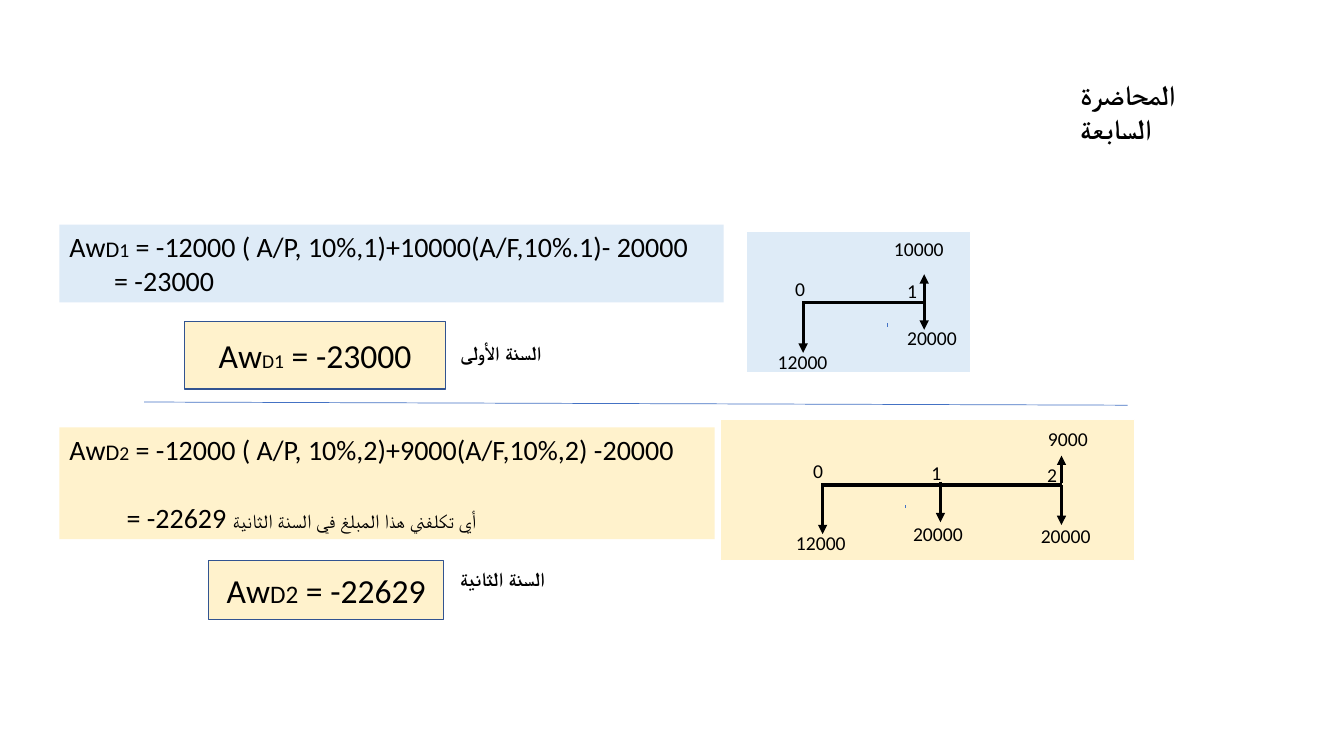
"""Build a slide comparing annual worth over one and two years with cash-flow diagrams."""
import dataclasses

import pptx
import pptx.dml.color
import pptx.enum.shapes
import pptx.enum.text
import pptx.oxml
import pptx.oxml.ns
import pptx.util


@dataclasses.dataclass(frozen=True)
class Theme:
    ink: str = "000000"
    paper: str = "FFFFFF"
    blue: str = "DEEBF7"
    cream: str = "FFF2CC"
    border: str = "325491"
    accent: str = "4472C4"
    title_font: str = "Arial"
    body_font: str = "Calibri"
    result_size: int = 24
    formula_size: int = 20
    result_mark: int = 18
    formula_mark: int = 16
    label_size: int = 14
    thick: float = 2.25
    outline: float = 1
    hairline: float = 0.5


class Sheet:
    def __init__(self, deck, theme):
        self.theme = theme
        self.slide = deck.slides.add_slide(deck.slide_layouts[5])
        self.shapes = self.slide.shapes

    def color(self, value):
        return pptx.dml.color.RGBColor.from_string(value)

    def add_spans(self, para, spans, font=None, size=None, bold=False):
        for text, span_size in spans:
            span = para.add_run()
            span.text = text
            if span_size:
                span.font.size = pptx.util.Pt(span_size)
        para.font.name = font or self.theme.body_font
        para.font.color.rgb = self.color(self.theme.ink)
        para.font.bold = bold
        if size:
            para.font.size = pptx.util.Pt(size)

    def title(self, text, *place):
        box = self.shapes.title
        box.left, box.top, box.width, box.height = map(pptx.util.Cm, place)
        frame = box.text_frame
        frame.word_wrap = True
        frame.auto_size = pptx.enum.text.MSO_AUTO_SIZE.NONE
        frame.vertical_anchor = pptx.enum.text.MSO_ANCHOR.TOP
        para = frame.paragraphs[0]
        para.alignment = pptx.enum.text.PP_ALIGN.LEFT
        self.add_spans(para, [(text, None)], self.theme.title_font, self.theme.formula_size, True)

    def label(self, text, left, top, width=2.34, height=0.86, bold=False):
        box = self.shapes.add_textbox(*map(pptx.util.Cm, (left, top, width, height)))
        box.text_frame.word_wrap = True
        self.add_spans(box.text_frame.paragraphs[0], [(text, None)], size=self.theme.label_size, bold=bold)

    def panel(self, place, fill, line=None):
        kind = pptx.enum.shapes.MSO_SHAPE.RECTANGLE
        box = self.shapes.add_shape(kind, *map(pptx.util.Cm, place))
        box.shadow.inherit = False
        box.fill.solid()
        box.fill.fore_color.rgb = self.color(fill)
        if line:
            box.line.color.rgb = self.color(line)
            box.line.width = pptx.util.Pt(self.theme.outline)
        else:
            box.line.fill.background()
        return box

    def formula(self, place, fill, year, terms, answer, indent, gap=0):
        theme = self.theme
        frame = self.panel(place, fill).text_frame
        frame.word_wrap = True
        frame.vertical_anchor = pptx.enum.text.MSO_ANCHOR.TOP
        first, second = frame.paragraphs[0], frame.add_paragraph()
        second._p.get_or_add_pPr().set("marL", str(pptx.util.Cm(indent)))
        second.space_before = pptx.util.Pt(gap)
        for para in (first, second):
            para.alignment = pptx.enum.text.PP_ALIGN.LEFT
        size = theme.formula_size
        self.add_spans(first, [("Aw", size), ("D", theme.formula_mark), (year, theme.label_size), (terms, size)])
        self.add_spans(second, answer)

    def result(self, place, mark, mark_size, value):
        size = self.theme.result_size
        frame = self.panel(place, self.theme.cream, self.theme.border).text_frame
        frame.word_wrap = True
        frame.vertical_anchor = pptx.enum.text.MSO_ANCHOR.MIDDLE
        para = frame.paragraphs[0]
        para.alignment = pptx.enum.text.PP_ALIGN.CENTER
        self.add_spans(para, [("Aw", size), (mark, mark_size), (value, size)])

    def line(self, start, end, color, width, arrow=False):
        kind = pptx.enum.shapes.MSO_CONNECTOR.STRAIGHT
        link = self.shapes.add_connector(kind, *map(pptx.util.Cm, (*start, *end)))
        link.line.color.rgb = self.color(color)
        link.line.width = pptx.util.Pt(width)
        namespace = pptx.oxml.ns.nsdecls("a")
        properties = link._element.spPr
        if arrow:
            head = pptx.oxml.parse_xml(f'<a:tailEnd {namespace} type="triangle"/>')
            properties.find(pptx.oxml.ns.qn("a:ln")).append(head)
        properties.append(pptx.oxml.parse_xml(f"<a:effectLst {namespace}/>"))

    def cash_flow(self, place, fill, tick, axis, arrows, amounts, years):
        theme = self.theme
        self.shapes = self.slide.shapes.add_group_shape().shapes
        self.panel(place, fill, theme.paper)
        tick_x, tick_y = tick
        self.line(tick, (tick_x, tick_y + 0.08), theme.accent, theme.hairline)
        start, end, level = axis
        self.line((start, level), (end, level), theme.ink, theme.thick)
        for x, tail, tip in arrows:
            self.line((x, tail), (x, tip), theme.ink, theme.thick, True)
        for text, left, top in amounts:
            self.label(text, left, top)
        for year, (left, top) in enumerate(years):
            self.label(str(year), left, top, width=0.64)
        self.shapes = self.slide.shapes


def main():
    theme = Theme()
    deck = pptx.Presentation()
    deck.slide_width, deck.slide_height = pptx.util.Cm(33.87), pptx.util.Cm(19.05)
    sheet = Sheet(deck, theme)
    sheet.title("المحاضرة السابعة", 26.97, 1.83, 4.85, 1.12)
    for text, top in (("السنة الأولى", 8.46), ("السنة الثانية", 14.15)):
        sheet.label(text, 11.35, top, width=2.69, bold=True)

    sheet.cash_flow(
        (18.8, 5.84, 5.66, 3.56), theme.blue, (22.35, 8.15), (20.22, 23.29, 7.62),
        arrows=[(20.24, 7.67, 8.89), (23.29, 7.59, 6.91), (23.29, 7.24, 8.31)],
        amounts=[("12000", 19.35, 8.69), ("10000", 22.28, 5.84), ("20000", 22.61, 8.1)],
        years=[(19.79, 6.86), (22.61, 6.91)])
    sheet.cash_flow(
        (18.16, 10.57, 10.44, 3.56), theme.cream, (22.81, 12.73), (20.7, 26.77, 12.22),
        arrows=[(20.73, 12.24, 13.46), (26.75, 12.17, 11.48), (23.7, 12.14, 13.16), (26.75, 12.22, 13.23)],
        amounts=[("12000", 19.81, 13.26), ("9000", 26.16, 10.64),
                 ("20000", 22.76, 13.03), ("20000", 25.98, 13.08)],
        years=[(20.24, 11.43), (23.22, 11.48), (26.14, 11.53)])

    size = theme.formula_size
    sheet.formula((1.5, 5.66, 16.74, 1.96), theme.blue, "1",
                  " = -12000 ( A/P, 10%,1)+10000(A/F,10%.1)- 20000",
                  [("= -23000", size)], indent=1.13)
    sheet.formula((1.5, 10.77, 16.51, 2.82), theme.cream, "2",
                  " = -12000 ( A/P, 10%,2)+9000(A/F,10%,2) -20000",
                  [("= -22629 ", size), ("أي تكلفني هذا المبلغ في السنة الثانية", theme.label_size)],
                  indent=1.44, gap=24.4)
    sheet.line((28.42, 10.21), (3.63, 10.13), theme.accent, theme.hairline)
    sheet.result((4.65, 8.1, 6.58, 1.7), "D1", theme.label_size, " = -23000")
    sheet.result((5.26, 14.12, 5.92, 1.5), "D2", theme.result_mark, " = -22629")
    deck.save("out.pptx")


if __name__ == "__main__":
    main()
